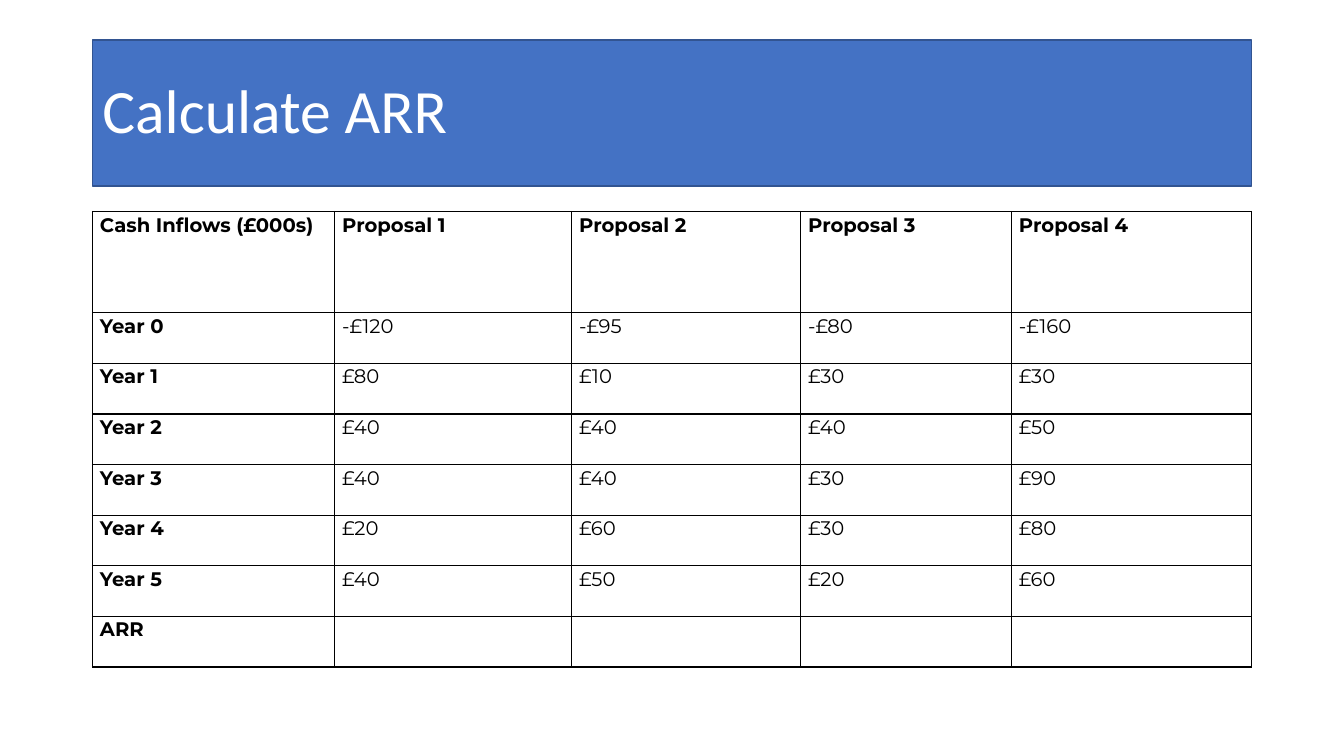
"""Build the slide that asks for the ARR of four proposals."""
from lxml import etree
from pptx import Presentation
from pptx import util as u
from pptx.dml.color import RGBColor
from pptx.enum import shapes, text
from pptx.oxml.ns import qn

COLOURS = {"banner": "4472C4", "banner_edge": "325491", "paper": "FFFFFF", "ink": "000000"}
CASH_FLOWS = [
    ["Cash Inflows (£000s)", "Proposal 1", "Proposal 2", "Proposal 3", "Proposal 4"],
    ["Year 0", "-£120", "-£95", "-£80", "-£160"],
    ["Year 1", "£80", "£10", "£30", "£30"],
    ["Year 2", "£40", "£40", "£40", "£50"],
    ["Year 3", "£40", "£40", "£30", "£90"],
    ["Year 4", "£20", "£60", "£30", "£80"],
    ["Year 5", "£40", "£50", "£20", "£60"],
    ["ARR", "", "", "", ""],
]
COLUMN_SHARES = [2.4, 2.35, 2.27, 2.09, 2.38]
ROW_SHARES = [2] + [1] * (len(CASH_FLOWS) - 1)


def colour(name):
    """Return the named colour."""
    return RGBColor.from_string(COLOURS[name])


def add_run(paragraph, words, size, font, ink, bold=False):
    """Add one styled run to a paragraph."""
    run = paragraph.add_run()
    run.text = words
    run.font.size, run.font.name, run.font.bold = u.Pt(size), font, bold
    run.font.color.rgb = colour(ink)


def add_banner(slide, heading, left, top, width, height):
    """Draw the heading in a filled banner."""
    banner = slide.shapes.add_shape(
        shapes.MSO_SHAPE.RECTANGLE, u.Cm(left), u.Cm(top), u.Cm(width), u.Cm(height))
    banner.shadow.inherit = False
    banner.fill.solid()
    banner.fill.fore_color.rgb = colour("banner")
    banner.line.color.rgb = colour("banner_edge")
    banner.line.width = u.Pt(1)
    frame = banner.text_frame
    frame.word_wrap = True
    frame.vertical_anchor = text.MSO_ANCHOR.MIDDLE
    title = frame.paragraphs[0]
    title.alignment = text.PP_ALIGN.LEFT
    title.line_spacing = 0.9
    add_run(title, heading, 44, "Calibri", "paper")


def add_borders(cell):
    """Rule all four sides of a cell."""
    properties = cell._tc.get_or_add_tcPr()
    for position, side in enumerate(("a:lnL", "a:lnR", "a:lnT", "a:lnB")):
        rule = etree.Element(qn(side), w=str(u.Pt(1)))
        fill = etree.SubElement(rule, qn("a:solidFill"))
        etree.SubElement(fill, qn("a:srgbClr"), val=COLOURS["ink"])
        properties.insert(position, rule)


def fill_cell(cell, words, bold, space_after):
    """Style one cell and write its words."""
    cell.fill.solid()
    cell.fill.fore_color.rgb = colour("paper")
    cell.margin_left = cell.margin_right = u.Cm(0.19)
    cell.margin_top = cell.margin_bottom = 0
    add_borders(cell)
    if words:
        entry = cell.text_frame.paragraphs[0]
        entry.line_spacing = 1.07
        entry.space_after = u.Pt(space_after)
        add_run(entry, words, 14, "Montserrat", "ink", bold)


def add_cash_flows(slide, left, top, width, height):
    """Draw the cash flow table, sharing the box among its columns and rows."""
    table = slide.shapes.add_table(
        len(CASH_FLOWS), len(COLUMN_SHARES),
        u.Cm(left), u.Cm(top), u.Cm(width), u.Cm(height)).table
    table.first_row = table.horz_banding = False
    for column, share in zip(table.columns, COLUMN_SHARES):
        column.width = u.Cm(width * share / sum(COLUMN_SHARES))
    for row, share in zip(table.rows, ROW_SHARES):
        row.height = u.Cm(height * share / sum(ROW_SHARES))
    for r, entries in enumerate(CASH_FLOWS):
        space_after = 0 if entries[0] == "ARR" else 8
        for c, words in enumerate(entries):
            fill_cell(table.cell(r, c), words, r == 0 or c == 0, space_after)


def main():
    """Build and save the presentation."""
    deck = Presentation()
    deck.slide_width, deck.slide_height = u.Cm(33.87), u.Cm(19.05)
    slide = deck.slides.add_slide(deck.slide_layouts[6])
    left, width = 2.33, 29.21
    add_banner(slide, "Calculate ARR", left, 1.01, width, 3.68)
    add_cash_flows(slide, left, 5.33, width, 11.48)
    deck.save("out.pptx")


if __name__ == "__main__":
    main()
